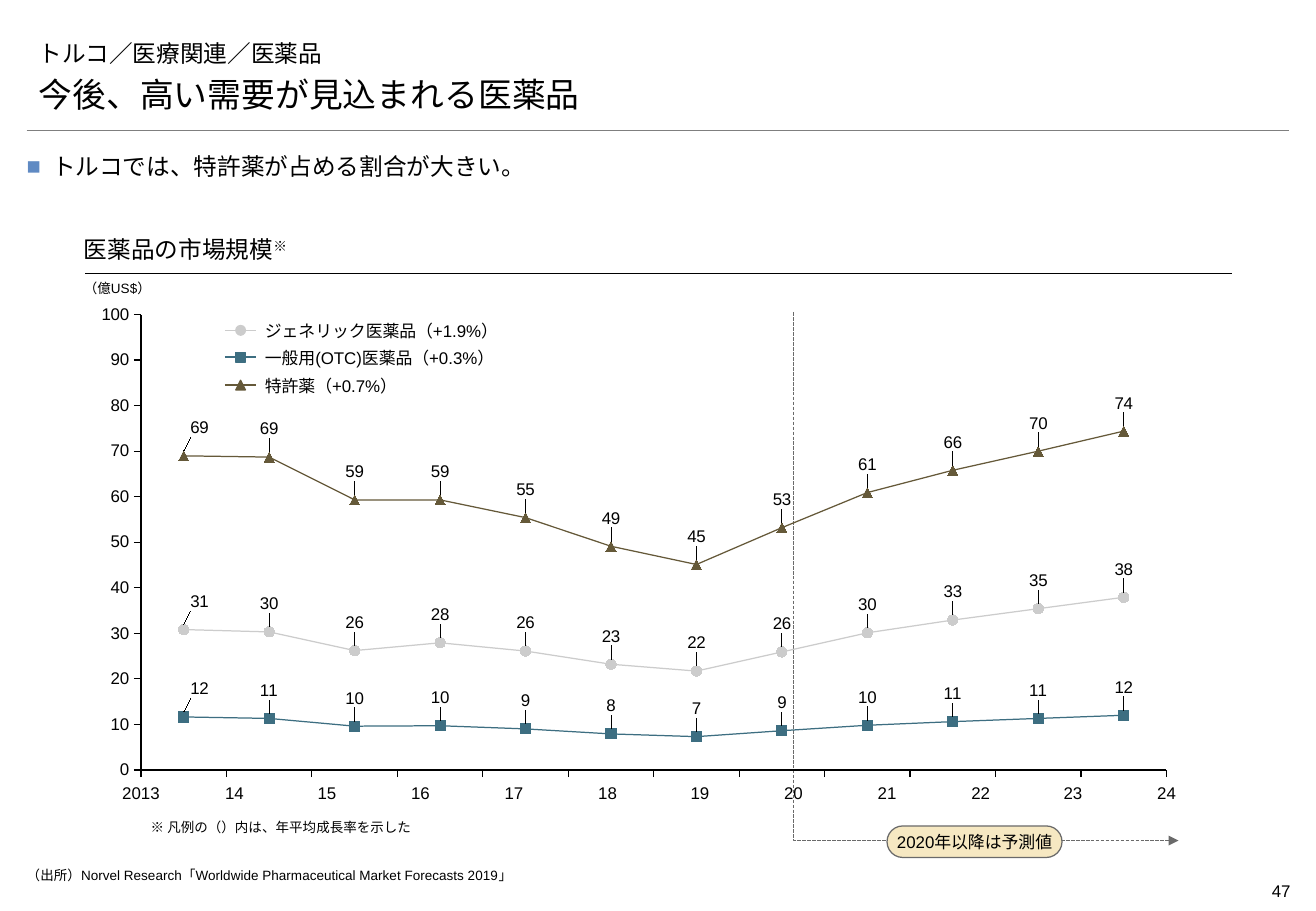
import pptx
import pptx.chart.data
import pptx.dml.color
import pptx.enum.chart
import pptx.enum.dml
import pptx.enum.shapes
import pptx.enum.text
import pptx.oxml
import pptx.oxml.ns
import pptx.util

PX = 9144
COLORS = {"text": "000000", "rule": "7F7F7F", "bullet": "5F8AC3", "forecast": "6A6A6A",
          "badge": "F6E8C2", "generic": "CCCCCC", "otc": "3D6E81", "patent": "655939"}
ALIGN = pptx.enum.text.PP_ALIGN
ANCHOR = pptx.enum.text.MSO_ANCHOR
SHAPE = pptx.enum.shapes.MSO_SHAPE
MARKER = pptx.enum.chart.XL_MARKER_STYLE
YEARS = ["2013"] + [str(year) for year in range(14, 25)]
SERIES = [
    ("ジェネリック医薬品（+1.9%）", "generic", MARKER.CIRCLE, SHAPE.OVAL,
     [30.81, 30.3, 26.2, 27.9, 26.1, 23.2, 21.7, 25.9, 30.1, 32.9, 35.4, 37.9]),
    ("一般用(OTC)医薬品（+0.3%）", "otc", MARKER.SQUARE, SHAPE.RECTANGLE,
     [11.63, 11.3, 9.6, 9.7, 9, 7.9, 7.3, 8.6, 9.8, 10.6, 11.3, 12]),
    ("特許薬（+0.7%）", "patent", MARKER.TRIANGLE, SHAPE.ISOSCELES_TRIANGLE,
     [68.97, 68.7, 59.3, 59.3, 55.4, 49.1, 45.1, 53.2, 60.9, 65.8, 70, 74.4]),
]
PLOT = (47, 11, 844, 375)
STEP = PLOT[2] / (len(YEARS) - 1)
LABEL_RISE = 7
FIRST_LABEL_SHIFT = 13


def emu(*lengths):
    return [pptx.util.Emu(round(length) * PX) for length in lengths]


def rgb(name):
    return pptx.dml.color.RGBColor.from_string(COLORS[name])


def xml(source):
    return pptx.oxml.parse_xml(source)


def set_line(line, color, width=0.75):
    line.color.rgb = rgb(color)
    line.width = pptx.util.Pt(width)


def set_fill(fill, color):
    fill.solid()
    fill.fore_color.rgb = rgb(color)


def fill_text(sp, runs, size, font="Arial", align=ALIGN.LEFT, anchor=ANCHOR.TOP,
              insets=(0, 0, 0, 0), wrap=True):
    tf = sp.text_frame
    tf.word_wrap = wrap
    tf.vertical_anchor = anchor
    tf.margin_left, tf.margin_top, tf.margin_right, tf.margin_bottom = emu(*insets)
    p = tf.paragraphs[0]
    p.alignment = align
    for text in runs:
        r = p.add_run()
        r.text = text
        r.font.size = pptx.util.Pt(size)
        r.font.name = font
        r.font.color.rgb = rgb("text")
    return p


def add_text(s, box, runs, size, **style):
    return fill_text(s.shapes.add_textbox(*emu(*box)), runs, size, **style)


def add_line(s, x, y, w, color, width=0.75):
    line = s.shapes.add_connector(pptx.enum.shapes.MSO_CONNECTOR.STRAIGHT, *emu(x, y, x + w, y))
    set_line(line.line, color, width)
    line._element.spPr.append(xml(f'<a:effectLst {pptx.oxml.ns.nsdecls("a")}/>'))


def add_shape(s, kind, box, fill, line):
    sp = s.shapes.add_shape(kind, *emu(*box))
    sp.shadow.inherit = False
    set_fill(sp.fill, fill)
    set_line(sp.line, line)
    return sp


def add_header(s, box):
    x, y, w, h = box
    style = {"font": "Montserrat", "anchor": ANCHOR.BOTTOM, "insets": (10, 5, 10, 5)}
    add_text(s, (x, y, w, 39), ["トルコ／医療関連／医薬品"], 14, **style)
    add_text(s, (x, y + 39, w, 39), ["今後、高い需要が見込まれる医薬品"], 20, **style)
    add_line(s, x, y + h, w, "rule", 0.25)


def add_message(s, box):
    p = add_text(s, box, ["トルコでは、特許薬が占める割合が大きい。"], 14, align=ALIGN.JUSTIFY)
    p.line_spacing = 1.1
    p.space_after = pptx.util.Pt(2)
    pPr = p._p.get_or_add_pPr()
    indent = emu(21)[0]
    pPr.set("marL", str(indent))
    pPr.set("indent", str(-indent))
    ns = pptx.oxml.ns.nsdecls("a")
    pPr.append(xml(f'<a:buClr {ns}><a:srgbClr val="{COLORS["bullet"]}"/></a:buClr>'))
    pPr.append(xml(f'<a:buFont {ns} typeface="Arial"/>'))
    pPr.append(xml(f'<a:buChar {ns} char="■"/>'))


def add_chart_heading(s, box):
    x, y, w, h = box
    p = add_text(s, box, ["医薬品の市場規模", "※"], 14, font="Montserrat",
                 anchor=ANCHOR.BOTTOM, insets=(0, 5, 0, 8))
    p.runs[1].font._element.set("baseline", "30000")
    add_line(s, x + 1, y + h, w - 1, "text")
    add_text(s, (x, y + h, 91, 24), ["（億US$）"], 8, anchor=ANCHOR.MIDDLE)


def add_point_labels(series, w, h):
    ns = pptx.oxml.ns.nsdecls("c")
    labels = series.data_labels
    labels.show_value = True
    for i in range(len(YEARS)):
        series.points[i].data_label.position = pptx.enum.chart.XL_LABEL_POSITION.ABOVE
    for i, label in enumerate(series._element.xpath("c:dLbls/c:dLbl")):
        shift = FIRST_LABEL_SHIFT / w if i == 0 else 0
        label.insert(1, xml(f'<c:layout {ns}><c:manualLayout><c:x val="{shift}"/>'
                            f'<c:y val="{-LABEL_RISE / h}"/></c:manualLayout></c:layout>'))
        label.insert(2, xml(f'<c:numFmt {ns} formatCode="#,##0" sourceLinked="0"/>'))
    labels._element.append(xml(
        f'<c:extLst {ns}><c:ext uri="{{CE6537A1-D6FC-4f65-9D91-7224C49458BB}}" '
        'xmlns:c15="http://schemas.microsoft.com/office/drawing/2012/chart">'
        '<c15:showLeaderLines val="1"/></c:ext></c:extLst>'))


def place_plot(chart, w, h):
    area = chart._chartSpace.chart.plotArea
    for layout in area.xpath("c:layout"):
        area.remove(layout)
    sizes = zip("xywh", PLOT, (w, h, w, h))
    parts = "".join(f'<c:{key} val="{length / full}"/>' for key, length, full in sizes)
    area.insert(0, xml(
        f'<c:layout {pptx.oxml.ns.nsdecls("c")}><c:manualLayout><c:layoutTarget val="inner"/>'
        f'<c:xMode val="edge"/><c:yMode val="edge"/>{parts}</c:manualLayout></c:layout>'))
    for crossing in area.xpath("c:valAx/c:crossBetween"):
        crossing.set("val", "midCat")


def add_market_chart(s, box):
    x, y, w, h = box
    data = pptx.chart.data.CategoryChartData()
    data.categories = YEARS
    for name, _, _, _, values in SERIES:
        data.add_series(name, values)
    chart = s.shapes.add_chart(pptx.enum.chart.XL_CHART_TYPE.LINE_MARKERS, *emu(*box), data).chart
    chart.has_legend = False
    chart.has_title = False
    chart.font.size = pptx.util.Pt(10)
    chart.font.name = "Arial"
    chart.font.color.rgb = rgb("text")
    chart.plots[0].vary_by_categories = False
    for axis in (chart.category_axis, chart.value_axis):
        axis.has_major_gridlines = False
        axis.major_tick_mark = pptx.enum.chart.XL_TICK_MARK.OUTSIDE
        set_line(axis.format.line, "text")
    chart.category_axis.tick_label_position = pptx.enum.chart.XL_TICK_LABEL_POSITION.NONE
    axis = chart.value_axis
    axis.minimum_scale, axis.maximum_scale, axis.major_unit = 0, 100, 10
    axis.tick_labels.number_format = "#,##0"
    axis.tick_labels.number_format_is_linked = False
    for series, (_, color, marker, _, _) in zip(chart.plots[0].series, SERIES):
        series.smooth = False
        set_line(series.format.line, color)
        series.marker.style = marker
        series.marker.size = 6
        set_fill(series.marker.format.fill, color)
        set_line(series.marker.format.line, color)
        add_point_labels(series, w, h)
    place_plot(chart, w, h)
    for i, year in enumerate(YEARS):
        center = x + PLOT[0] + i * STEP
        add_text(s, (center - 20, y + h - 1, 40, 17), [year], 10, align=ALIGN.CENTER)


def add_legend(s, box):
    x, y, w, h = box
    pitch = h / len(SERIES)
    for i, (name, color, _, kind, _) in enumerate(SERIES):
        middle = round(y + pitch * (i + 0.5))
        add_line(s, x, middle, 26, color)
        add_shape(s, kind, (x + 9, middle - 4, 8, 8), color, color)
        add_text(s, (x + 33, middle - 8, w - 33, 17), [name], 10, anchor=ANCHOR.MIDDLE)


def add_forecast(s, box):
    x, y, w, h = box
    builder = s.shapes.build_freeform(x, y, scale=PX)
    builder.add_line_segments([(x, y + h), (x + w, y + h)], close=False)
    sp = builder.convert_to_shape()
    sp.shadow.inherit = False
    sp.fill.background()
    set_line(sp.line, "forecast")
    sp.line.dash_style = pptx.enum.dml.MSO_LINE.SQUARE_DOT
    sp.line._get_or_add_ln().append(
        xml(f'<a:tailEnd {pptx.oxml.ns.nsdecls("a")} type="triangle"/>'))
    badge = add_shape(s, SHAPE.ROUNDED_RECTANGLE, (x + 77, y + h - 12, 144, 26), "badge", "forecast")
    badge.adjustments[0] = 0.5
    fill_text(badge, ["2020年以降は予測値"], 10, align=ALIGN.CENTER, anchor=ANCHOR.MIDDLE, wrap=False)


def add_footer(s, box):
    x, y, w, h = box
    add_text(s, (x + 102, y, 228, 16), ["※ 凡例の（）内は、年平均成長率を示した"], 8)
    add_text(s, (x, y + 40, 929, 16),
             ["（出所）Norvel Research「Worldwide Pharmaceutical Market Forecasts 2019」"], 8)
    add_text(s, (x + w - 79, y + h - 27, 79, 27), ["47"], 10, align=ALIGN.RIGHT, insets=(0, 5, 0, 5))


def main():
    prs = pptx.Presentation()
    prs.slide_width, prs.slide_height = emu(1083, 750)
    s = prs.slides.add_slide(prs.slide_layouts[6])
    add_header(s, (22, 21, 1039, 86))
    add_message(s, (22, 123, 1039, 24))
    add_chart_heading(s, (69, 194, 945, 31))
    add_forecast(s, (653, 257, 317, 435))
    add_market_chart(s, (69, 248, 904, 397))
    add_legend(s, (185, 261, 260, 67))
    add_footer(s, (22, 674, 1040, 73))
    prs.save("out.pptx")


if __name__ == "__main__":
    main()
